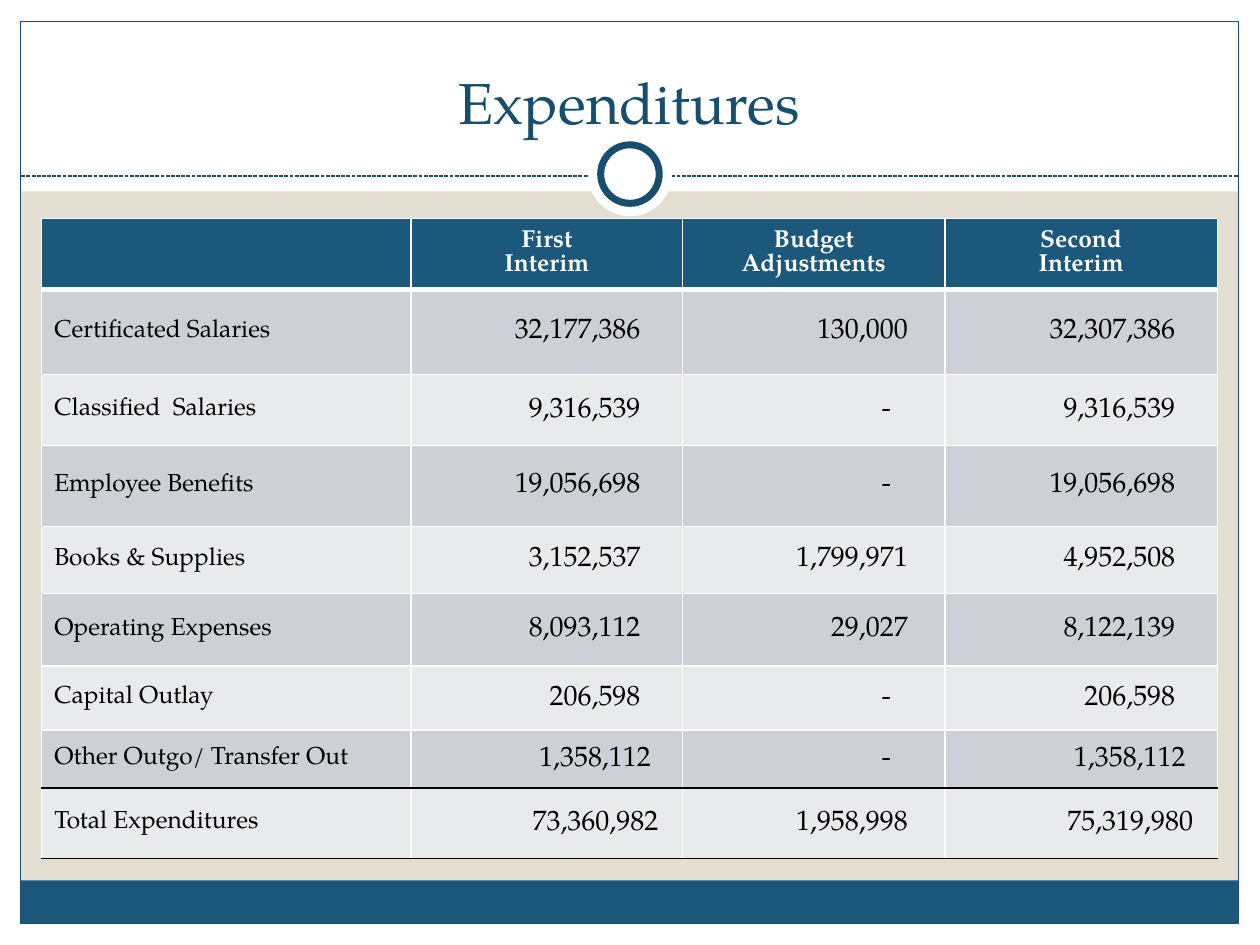
from dataclasses import dataclass

from lxml import etree
from pptx import Presentation, util as u
from pptx.dml.color import RGBColor
from pptx.enum import dml, shapes, text
from pptx.oxml import ns

Cm, Pt = u.Cm, u.Pt
FONT = "TeX Gyre Pagella"
WHITE, BLACK, SAND = "FFFFFF", "000000", "E3DED1"
BLUE, NAVY = "1B587C", "184E6D"
BANDS = ("CDD1D7", "E8EAEC")


@dataclass
class Box:
    left: float
    top: float
    width: float
    height: float
    fill: str | None = WHITE
    line: str | None = None
    weight: float = 0.75
    kind: shapes.MSO_SHAPE = shapes.MSO_SHAPE.RECTANGLE


@dataclass
class Row:
    label: str
    first: str
    adjust: str
    second: str
    height: float
    pad: float = 0.85  # right inset of the interim columns


PARTS = [
    Box(0, 18.62, 25.4, 0.43),
    Box(0, 0, 25.4, 3.86),
    Box(0, 0, 0.43, 19.05),
    Box(24.97, 0, 0.43, 19.05),
    Box(0.42, 17.75, 24.54, 0.87, BLUE),
    Box(0.42, 0.43, 24.55, 18.19, None, NAVY),
]
RING = [
    Box(11.85, 2.66, 1.7, 1.7, kind=shapes.MSO_SHAPE.OVAL),
    Box(12.11, 2.92, 1.18, 1.18, WHITE, NAVY, 4, shapes.MSO_SHAPE.OVAL),
]
HEADS = ("", "First\nInterim", "Budget\vAdjustments", "Second\nInterim")
ROWS = [
    Row("Certificated Salaries", "32,177,386", "130,000", "32,307,386", 1.72),
    Row("Classified  Salaries", "9,316,539", "-", "9,316,539", 1.43),
    Row("Employee Benefits", "19,056,698", "-", "19,056,698", 1.63),
    Row("Books & Supplies", "3,152,537", "1,799,971", "4,952,508", 1.35),
    Row("Operating Expenses", "8,093,112", "29,027", "8,122,139", 1.47),
    Row("Capital Outlay", "206,598", "-", "206,598", 1.29),
    Row("Other Outgo/ Transfer Out", "1,358,112", "-", "1,358,112", 1.17, 0.64),
    Row("Total Expenditures", "73,360,982", "1,958,998", "75,319,980", 1.42, 0.49),
]
COLS = (7.45, 5.47, 5.29, 5.49)
HEAD = 1.43  # header row height


def color(code: str) -> RGBColor:
    return RGBColor.from_string(code)


def write(frame, words: str, *, size: float = 14, ink: str = BLACK,
          bold: bool = False, align=text.PP_ALIGN.LEFT, pitch=None) -> None:
    frame.text = words
    for para in frame.paragraphs:
        para.alignment = align
        para.line_spacing = pitch
        font = para.font
        font.name, font.size, font.bold = FONT, Pt(size), bold
        font.color.rgb = color(ink)
        for run in para.runs:
            run.font.name, run.font.size, run.font.bold = FONT, Pt(size), bold
            run.font.color.rgb = color(ink)


def draw(slide, box: Box) -> None:
    shape = slide.shapes.add_shape(
        box.kind, Cm(box.left), Cm(box.top), Cm(box.width), Cm(box.height))
    shape.shadow.inherit = False
    if box.fill:
        shape.fill.solid()
        shape.fill.fore_color.rgb = color(box.fill)
    else:
        shape.fill.background()
    if box.line:
        shape.line.color.rgb = color(box.line)
        shape.line.width = Pt(box.weight)
    else:
        shape.line.fill.background()


def rule(slide, left: float, right: float, top: float) -> None:
    line = slide.shapes.add_connector(
        shapes.MSO_CONNECTOR.STRAIGHT, Cm(left), Cm(top), Cm(right), Cm(top))
    line.line.color.rgb = color(NAVY)
    line.line.width = Pt(0.75)
    line.line.dash_style = dml.MSO_LINE.SQUARE_DOT
    etree.SubElement(line._element.spPr, ns.qn("a:effectLst"))


def style(cell, fill: str, top: tuple, base: tuple) -> None:
    """Set borders, each a (colour, points) pair, then the fill."""
    props = cell._tc.get_or_add_tcPr()
    side = (WHITE, 1)
    for tag, (ink, width) in zip("LRTB", (side, side, top, base)):
        edge = etree.SubElement(props, ns.qn(f"a:ln{tag}"), w=str(Pt(width)))
        solid = etree.SubElement(edge, ns.qn("a:solidFill"))
        etree.SubElement(solid, ns.qn("a:srgbClr"), val=ink)
    cell.fill.solid()
    cell.fill.fore_color.rgb = color(fill)
    cell.vertical_anchor = text.MSO_ANCHOR.MIDDLE


def fill_row(table, index: int, row: Row) -> None:
    last = len(ROWS)
    top = (WHITE, 3) if index == 1 else (BLACK if index == last else WHITE, 1)
    base = (BLACK if index >= last - 1 else WHITE, 1)
    table.rows[index].height = Cm(row.height)
    pads = (None, row.pad, 1.09 if row.adjust == "-" else 0.75, row.pad)
    values = (row.label, row.first, row.adjust, row.second)
    for cell, words, pad in zip(table.rows[index].cells, values, pads):
        style(cell, BANDS[(index - 1) % 2], top, base)
        if pad is None:
            write(cell.text_frame, words)
            continue
        cell.margin_left = cell.margin_top = Cm(0.03)
        cell.margin_bottom, cell.margin_right = 0, Cm(pad)
        write(cell.text_frame, words, size=16, align=text.PP_ALIGN.RIGHT)


def add_grid(slide) -> None:
    height = HEAD + sum(row.height for row in ROWS)
    table = slide.shapes.add_table(
        len(ROWS) + 1, len(COLS), Cm(0.84), Cm(4.4),
        Cm(sum(COLS)), Cm(height)).table
    for col, width in zip(table.columns, COLS):
        col.width = Cm(width)
    table.rows[0].height = Cm(HEAD)
    for cell, words in zip(table.rows[0].cells, HEADS):
        style(cell, BLUE, (WHITE, 1), (WHITE, 3))
        write(cell.text_frame, words, ink=WHITE, bold=True,
              align=text.PP_ALIGN.CENTER, pitch=Pt(14))
    for index, row in enumerate(ROWS, 1):
        fill_row(table, index, row)


def main() -> None:
    deck = Presentation()
    deck.slide_width, deck.slide_height = Cm(25.4), Cm(19.05)
    slide = deck.slides.add_slide(deck.slide_layouts[6])
    slide.background.fill.solid()
    slide.background.fill.fore_color.rgb = color(SAND)

    # Frame, dashed rule and ring
    for part in PARTS:
        draw(slide, part)
    rule(slide, 0.43, 24.97, 3.55)
    for part in RING:
        draw(slide, part)

    # Title
    title = slide.shapes.add_textbox(Cm(0.84), Cm(0.64), Cm(23.7), Cm(2.11))
    frame = title.text_frame
    frame.word_wrap = True
    frame.vertical_anchor = text.MSO_ANCHOR.BOTTOM
    frame.margin_bottom = 0
    write(frame, "Expenditures", size=33, ink=NAVY, align=text.PP_ALIGN.CENTER)

    # Table
    add_grid(slide)
    deck.save("out.pptx")


if __name__ == "__main__":
    main()
